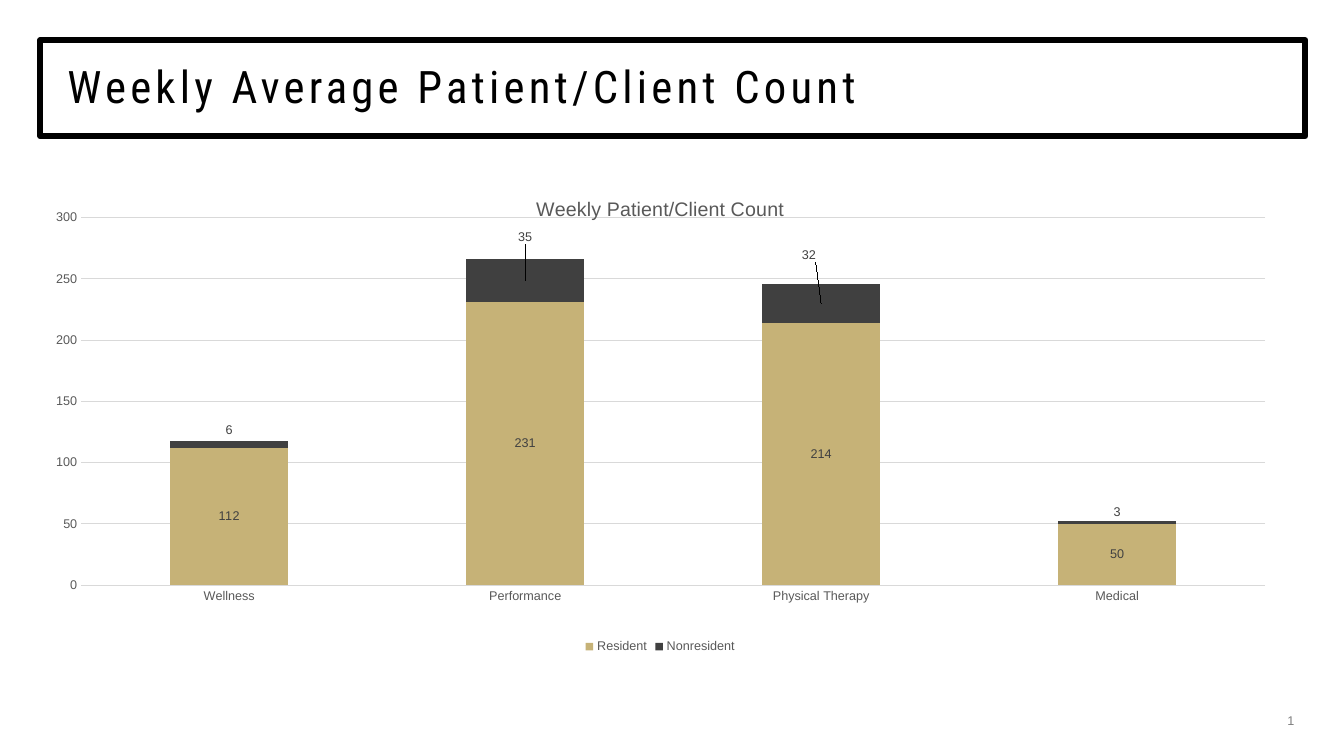
from dataclasses import dataclass

from lxml import etree
from pptx import Presentation
from pptx.chart.data import CategoryChartData
from pptx.dml.color import RGBColor
from pptx.enum.chart import XL_CHART_TYPE as ChartType
from pptx.enum.chart import XL_LABEL_POSITION as LabelPos
from pptx.enum.chart import XL_LEGEND_POSITION as LegendPos
from pptx.enum.chart import XL_TICK_MARK as TickMark
from pptx.enum.shapes import MSO_SHAPE as Shape
from pptx.enum.text import MSO_ANCHOR as Anchor
from pptx.enum.text import MSO_AUTO_SIZE as AutoSize
from pptx.enum.text import PP_ALIGN as Align
from pptx.oxml import parse_xml
from pptx.oxml.ns import nsdecls, qn
from pptx.util import Pt

BLACK = RGBColor(0x00, 0x00, 0x00)
WHITE = RGBColor(0xFF, 0xFF, 0xFF)
GOLD = RGBColor(0xC6, 0xB2, 0x77)
CHARCOAL = RGBColor(0x40, 0x40, 0x40)
AXIS_GRAY = RGBColor(0x59, 0x59, 0x59)
GRID_GRAY = RGBColor(0xD9, 0xD9, 0xD9)
NUMBER_GRAY = RGBColor(0x7F, 0x7F, 0x7F)
BODY_FONT = "Arial"
TITLE_FONT = "Roboto Condensed"
COUNT_FORMAT = "#,##0"
CATEGORIES = ["Wellness", "Performance", "Physical Therapy", "Medical"]


@dataclass
class CountSeries:
    name: str
    values: list[float]
    color: RGBColor
    label_shifts: list[tuple[float, float]]


SERIES = [
    CountSeries("Resident", [112, 231, 214, 50], GOLD, []),
    CountSeries("Nonresident", [6, 35, 32, 2.5], CHARCOAL,
                [(0, -0.03), (0, -0.09), (-0.01, -0.1), (0, -0.02)]),
]


def set_font(font, size: float, color: RGBColor, name: str = BODY_FONT) -> None:
    font.size = Pt(size)
    font.name = name
    font.bold = False
    font.color.rgb = color


def manual_layout(**parts: object) -> etree._Element:
    body = "".join(f'<c:{tag} val="{val}"/>' for tag, val in parts.items())
    return parse_xml(f'<c:layout {nsdecls("c")}><c:manualLayout>{body}'
                     '</c:manualLayout></c:layout>')


def add_title(slide) -> None:
    frame = slide.shapes.add_shape(Shape.RECTANGLE, Pt(28.8), Pt(28.8), Pt(903.6), Pt(68.4))
    frame.shadow.inherit = False
    frame.fill.background()
    frame.line.color.rgb = BLACK
    frame.line.width = Pt(4.5)

    title = slide.shapes.title
    title.left, title.top, title.width, title.height = Pt(48.2), Pt(29.5), Pt(865.4), Pt(68.4)
    tf = title.text_frame
    tf.margin_left = tf.margin_right = tf.margin_top = tf.margin_bottom = 0
    tf.vertical_anchor = Anchor.MIDDLE
    tf.word_wrap = True
    tf.auto_size = AutoSize.NONE
    p = tf.paragraphs[0]
    p.text = "Weekly Average Patient/Client Count"
    p.alignment = Align.LEFT
    p.line_spacing = 0.9
    set_font(p.font, 32, BLACK, TITLE_FONT)
    p.runs[0].font._element.set("spc", "300")


def add_slide_number(slide) -> None:
    box = slide.shapes.add_textbox(Pt(877), Pt(504.7), Pt(54.7), Pt(19.4))
    tf = box.text_frame
    tf.word_wrap = True
    tf.vertical_anchor = Anchor.MIDDLE
    p = tf.paragraphs[0]
    p.alignment = Align.RIGHT
    p._p.append(parse_xml(
        f'<a:fld {nsdecls("a")} id="{{B6F15528-21DE-4FAA-801E-634DDDAF4B2B}}" type="slidenum">'
        f'<a:rPr lang="en-US" sz="900"><a:solidFill><a:srgbClr val="{NUMBER_GRAY}"/></a:solidFill>'
        f'<a:latin typeface="{BODY_FONT}"/></a:rPr><a:t>6</a:t></a:fld>'))
    set_font(p.font, 9, NUMBER_GRAY)


def format_series(series, count: CountSeries) -> None:
    series.format.fill.solid()
    series.format.fill.fore_color.rgb = count.color
    labels = series.data_labels
    labels.show_value = True
    labels.number_format = COUNT_FORMAT
    labels.number_format_is_linked = False
    set_font(labels.font, 9, CHARCOAL)
    for i, (dx, dy) in enumerate(count.label_shifts):
        label = series.points[i].data_label
        label.position = LabelPos.CENTER
        set_font(label.font, 9, CHARCOAL)
    for idx, (dx, dy) in zip(series._element.xpath("c:dLbls/c:dLbl/c:idx"), count.label_shifts):
        idx.addnext(parse_xml(f'<c:numFmt {nsdecls("c")} formatCode="{COUNT_FORMAT}" sourceLinked="0"/>'))
        idx.addnext(manual_layout(x=dx, y=dy))


def add_count_chart(slide) -> None:
    data = CategoryChartData(number_format=COUNT_FORMAT)
    data.categories = CATEGORIES
    for count in SERIES:
        data.add_series(count.name, count.values)
    chart = slide.shapes.add_chart(ChartType.COLUMN_STACKED, Pt(28.8), Pt(127.4),
                                   Pt(885.6), Pt(342.7), data).chart
    set_font(chart.font, 10, BLACK)

    chart.has_title = True
    p = chart.chart_title.text_frame.paragraphs[0]
    p.text = "Weekly Patient/Client Count"
    set_font(p.font, 14, AXIS_GRAY)

    chart.has_legend = True
    chart.legend.position = LegendPos.BOTTOM
    chart.legend.include_in_layout = False
    set_font(chart.legend.font, 9, AXIS_GRAY)

    for axis in (chart.category_axis, chart.value_axis):
        axis.major_tick_mark = axis.minor_tick_mark = TickMark.NONE
        set_font(axis.tick_labels.font, 9, AXIS_GRAY)
    value_axis = chart.value_axis
    value_axis.minimum_scale, value_axis.maximum_scale, value_axis.major_unit = 0, 300, 50
    value_axis.tick_labels.number_format = COUNT_FORMAT
    value_axis.tick_labels.number_format_is_linked = False
    value_axis.format.line.fill.background()
    for line in (chart.category_axis.format.line, value_axis.major_gridlines.format.line):
        line.color.rgb = GRID_GRAY
        line.width = Pt(0.75)

    plot = chart.plots[0]
    plot.gap_width = 150
    plot.overlap = 100
    plot.vary_by_categories = False
    for series, count in zip(plot.series, SERIES):
        format_series(series, count)

    plot_area = plot._element.getparent()
    for old in plot_area.findall(qn("c:layout")):
        plot_area.remove(old)
    plot_area.insert(0, manual_layout(layoutTarget="inner", xMode="edge", yMode="edge",
                                      x=0.033, y=0.082, w=0.955, h=0.766))


def main() -> None:
    prs = Presentation()
    prs.slide_width, prs.slide_height = Pt(960), Pt(540)
    slide = prs.slides.add_slide(prs.slide_layouts[5])
    slide.background.fill.solid()
    slide.background.fill.fore_color.rgb = WHITE
    add_title(slide)
    add_slide_number(slide)
    add_count_chart(slide)
    prs.save("out.pptx")


if __name__ == "__main__":
    main()
